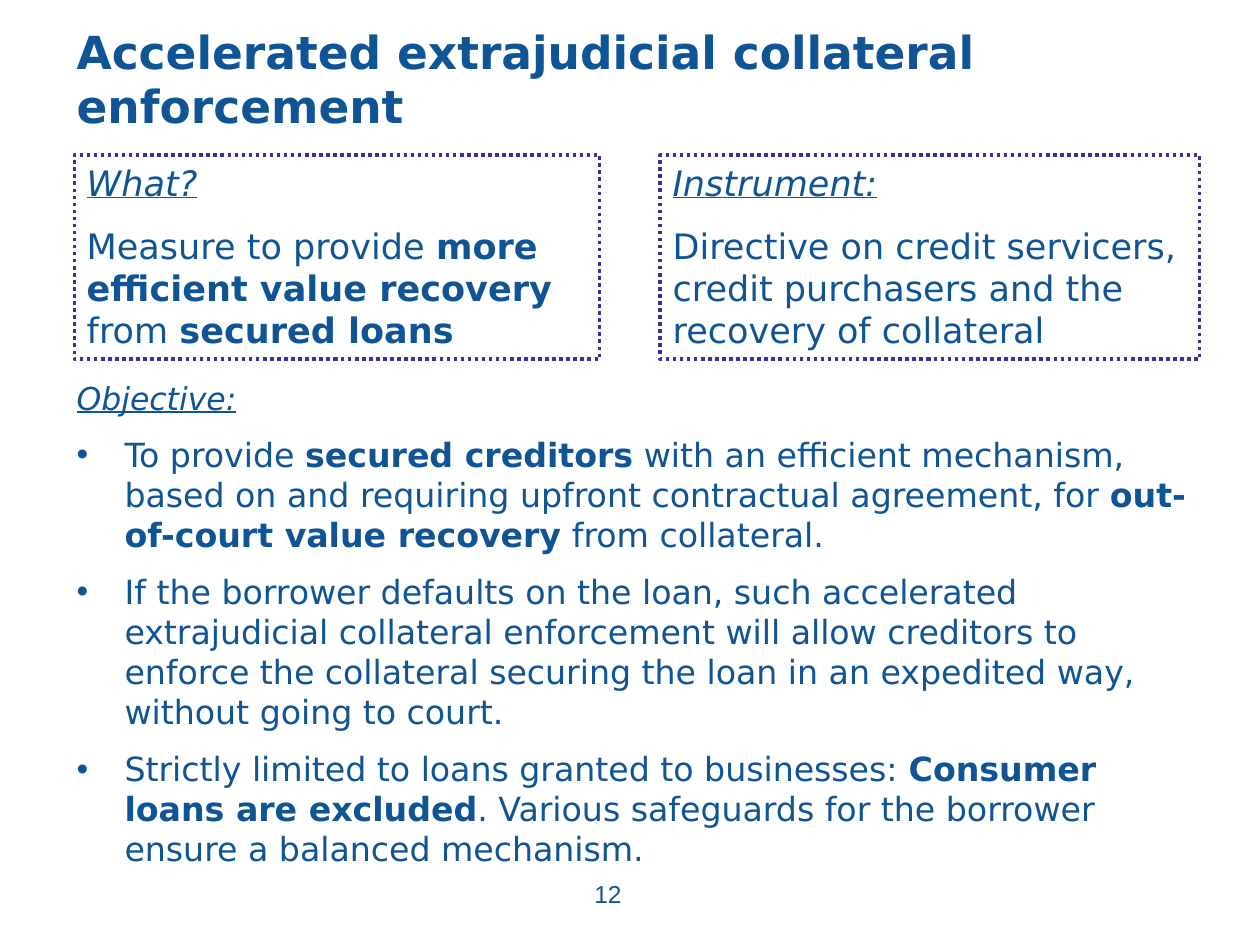
from lxml.etree import SubElement
from pptx import Presentation
from pptx.dml.color import RGBColor
from pptx.enum.dml import MSO_LINE
from pptx.enum.shapes import MSO_SHAPE
from pptx.enum.text import MSO_ANCHOR, PP_ALIGN
from pptx.oxml.ns import qn
from pptx.util import Pt

BLUE, BORDER, WHITE = "0F5494", "333399", "FFFFFF"
FONT = "DejaVu Sans"
BOLD_MARK = "**"

TITLE = "Accelerated extrajudicial collateral enforcement"
PAGE_NUMBER = "12"
BOXES = [
    (42.5, 300.2, "What?",
     "Measure to provide **more efficient value recovery** from **secured loans**"),
    (377.3, 308.2, "Instrument:",
     "Directive on credit servicers, credit purchasers and the recovery of collateral"),
]
BOX_TOP, BOX_HEIGHT = 88.6, 116.6
OBJECTIVE_HEADING = "Objective:"
OBJECTIVES = [
    "To provide **secured creditors** with an efficient mechanism, based on and requiring "
    "upfront contractual agreement, for **out-of-court value recovery** from collateral.",
    "If the borrower defaults on the loan, such accelerated extrajudicial collateral "
    "enforcement will allow creditors to enforce the collateral securing the loan in an "
    "expedited way, without going to court.",
    "Strictly limited to loans granted to businesses: **Consumer loans are excluded**. "
    "Various safeguards for the borrower ensure a balanced mechanism.",
]
BULLET_INDENT = 27.4


def color(value):
    return RGBColor.from_string(value)


def add_bullet(paragraph):
    properties = paragraph._p.get_or_add_pPr()
    properties.set("marL", str(Pt(BULLET_INDENT)))
    properties.set("indent", str(-Pt(BULLET_INDENT)))
    bullet_color = SubElement(properties, qn("a:buClr"))
    SubElement(bullet_color, qn("a:srgbClr"), val=BLUE)
    SubElement(properties, qn("a:buFont"), typeface="Arial")
    SubElement(properties, qn("a:buChar"), char="•")


def write(frame, text, size=20, font=FONT, bold=False, heading=False, bullet=False,
          before=0, align=PP_ALIGN.LEFT):
    paragraph = frame.paragraphs[0]
    if paragraph.runs:
        paragraph = frame.add_paragraph()
        paragraph.space_before = Pt(before)
    paragraph.alignment = align
    if bullet:
        add_bullet(paragraph)
    for index, part in enumerate(text.split(BOLD_MARK)):
        if not part:
            continue
        run = paragraph.add_run()
        run.text = part
        run.font.name = font
        run.font.size = Pt(size)
        run.font.bold = bold or index % 2 == 1
        run.font.italic = heading
        run.font.underline = heading
        run.font.color.rgb = color(BLUE)


def add_text_box(slide, left, top, width, height, anchor=MSO_ANCHOR.TOP):
    frame = slide.shapes.add_textbox(Pt(left), Pt(top), Pt(width), Pt(height)).text_frame
    frame.word_wrap = True
    frame.vertical_anchor = anchor
    return frame


def add_dotted_box(slide, left, width):
    shape = slide.shapes.add_shape(
        MSO_SHAPE.RECTANGLE, Pt(left), Pt(BOX_TOP), Pt(width), Pt(BOX_HEIGHT))
    shape.shadow.inherit = False
    shape.fill.solid()
    shape.fill.fore_color.rgb = color(WHITE)
    shape.line.color.rgb = color(BORDER)
    shape.line.width = Pt(2)
    shape.line.dash_style = MSO_LINE.ROUND_DOT
    shape.text_frame.word_wrap = True
    shape.text_frame.vertical_anchor = MSO_ANCHOR.TOP
    return shape.text_frame


def main():
    presentation = Presentation()
    presentation.slide_width, presentation.slide_height = Pt(720), Pt(540)
    slide = presentation.slides.add_slide(presentation.slide_layouts[6])

    title = add_text_box(slide, 36.7, 9.4, 648, 70.6, anchor=MSO_ANCHOR.MIDDLE)
    write(title, TITLE, size=26, bold=True)

    body = add_text_box(slide, 36.7, 213.1, 652.3, 294.5)
    write(body, OBJECTIVE_HEADING, size=18, heading=True)
    for objective in OBJECTIVES:
        write(body, objective, size=19, bullet=True, before=10)

    for left, width, heading, text in BOXES:
        frame = add_dotted_box(slide, left, width)
        write(frame, heading, heading=True)
        write(frame, text, before=12)

    number = add_text_box(slide, 263.5, 499, 167.8, 37.4)
    write(number, PAGE_NUMBER, size=14, font="Arial", align=PP_ALIGN.CENTER)

    presentation.save("out.pptx")


if __name__ == "__main__":
    main()
